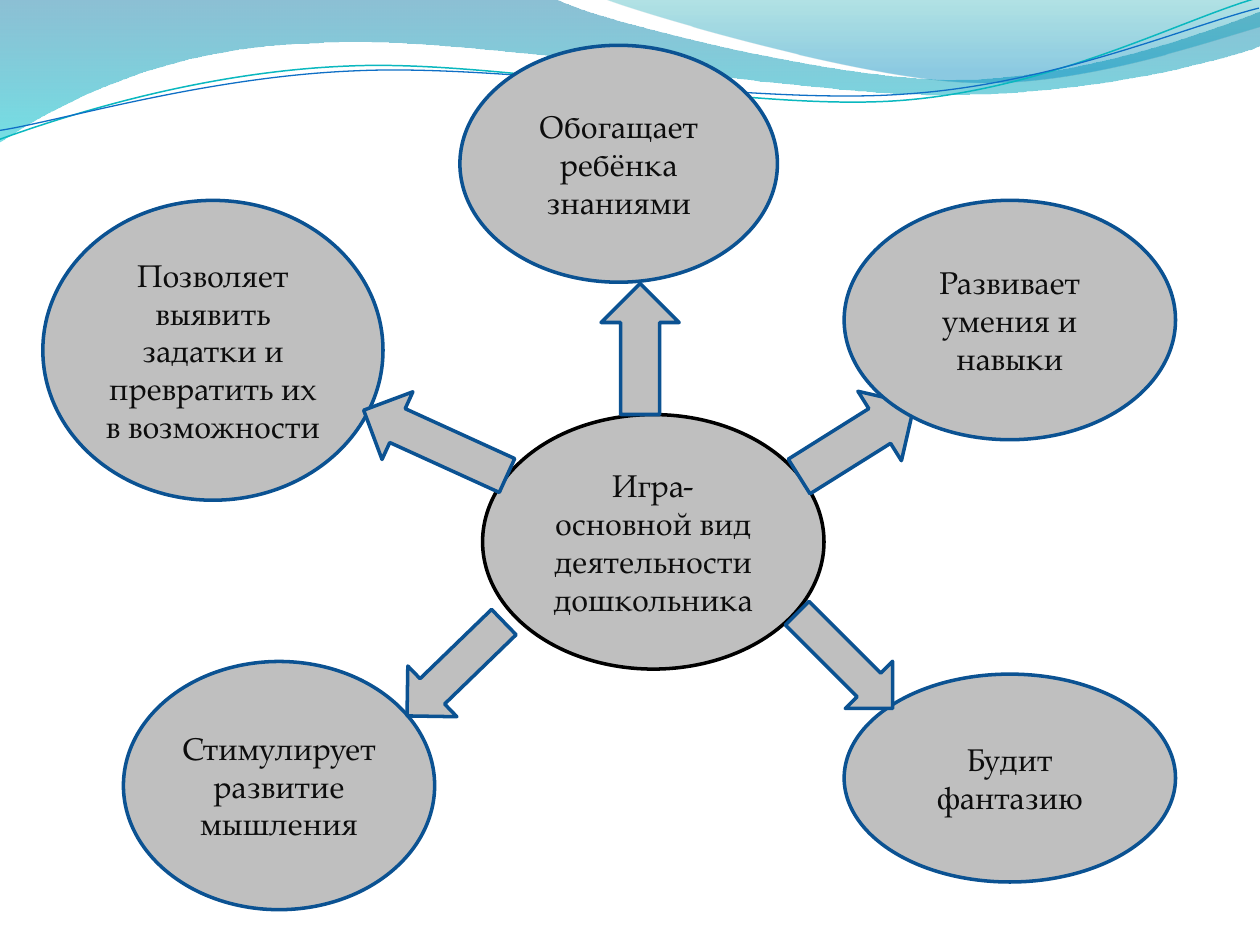
"""Build a slide showing what play gives a preschool child."""
from lxml import etree
from pptx import Presentation
from pptx.dml.color import RGBColor
from pptx.enum.shapes import MSO_SHAPE
from pptx.enum.text import MSO_ANCHOR, PP_ALIGN
from pptx.oxml.ns import qn
from pptx.util import Inches, Pt

OVAL = MSO_SHAPE.OVAL
RIGHT, LEFT, UP = MSO_SHAPE.RIGHT_ARROW, MSO_SHAPE.LEFT_ARROW, MSO_SHAPE.UP_ARROW
CENTER, MIDDLE = PP_ALIGN.CENTER, MSO_ANCHOR.MIDDLE
GRAY = RGBColor(0xBF, 0xBF, 0xBF)
NAVY = RGBColor(0x0B, 0x52, 0x92)
BLACK = RGBColor(0, 0, 0)
INK = RGBColor(0x0D, 0x0D, 0x0D)
DEEP = RGBColor(0x00, 0x74, 0xA1)
CYAN = RGBColor(0x00, 0xC6, 0xCF)
TEAL = RGBColor(0x00, 0xA1, 0xA9)
SKY = RGBColor(0x00, 0x8B, 0xBF)
AQUA = RGBColor(0x0A, 0xB8, 0xBF)
BLUE = RGBColor(0x0F, 0x6F, 0xC6)
FONT = "TeX Gyre Pagella"
COLS = 10
TILT = 357.3

WAVES = [
    ([(0, 0), (4.4, -0.01), (4.76, 0.17, 6.64, 0.63, 7.58, 0.63),
      (8.53, 0.63, 9.58, 0.26, 10, 0.09), (10.01, 0.36),
      (9.83, 0.44, 8.7, 0.76, 7.46, 0.75), (6.22, 0.75, 3.82, 0.28, 2.57, 0.34),
      (1.29, 0.36, 0.46, 0.83, -0.01, 1.13), (0, 0)],
     [(0, DEEP, 45), (1, CYAN, 55)]),
    ([(4.79, -0.01), (5.09, 0.11, 6.82, 0.62, 7.69, 0.65),
      (8.56, 0.69, 9.61, 0.32, 10, 0.21), (10, 0), (4.79, -0.01)],
     [(0, TEAL, 30), (0.8, SKY, 45)]),
]
STRANDS = [
    ([(-0.02, 0.87), (0.47, 0.72, 1.58, 0.41, 2.77, 0.42),
      (3.96, 0.42, 5.91, 0.93, 7.12, 0.9), (8.32, 0.87, 9.4, 0.36, 10, 0.22)], AQUA, 0.85),
    ([(-0.02, 0.8), (0.46, 0.75, 1.64, 0.45, 2.83, 0.46),
      (4.03, 0.46, 5.96, 0.88, 7.16, 0.85), (8.35, 0.83, 9.42, 0.42, 10.01, 0.3)], BLUE, 0.75),
]
BENEFITS = [
    ("Позволяет выявить задатки и превратить их в возможности", (0.34, 1.59, 2.7, 2.38)),
    ("Стимулирует развитие мышления", (0.98, 5.25, 2.47, 1.97)),
    ("Будит фантазию", (6.7, 5.35, 2.63, 1.65)),
    ("Обогащает ребёнка знаниями", (3.65, 0.36, 2.52, 1.88)),
]
ARROWS = [
    (RIGHT, (6.26, 3.17, 1.08, 0.65), 327.9),
    (UP, (4.77, 2.25, 0.62, 1.04), 0),
    (LEFT, (2.83, 3.22, 1.25, 0.59), 24.5),
    (RIGHT, (6.17, 4.98, 1.07, 0.53), 45),
    (LEFT, (3.08, 5.03, 1.07, 0.56), 315.9),
]


def write(tf, text, size=18, color=INK, font=FONT, align=CENTER):
    tf.word_wrap = True
    tf.vertical_anchor = MIDDLE
    p = tf.paragraphs[0]
    p.alignment = align
    r = p.add_run()
    r.text = text
    r.font.name, r.font.size = font, Pt(size)
    r.font.color.rgb = color


class Board:
    def __init__(self, prs):
        self.s = prs.slides.add_slide(prs.slide_layouts[6])
        self.cell = prs.slide_width / COLS

    def grid(self, values):
        return [round(v * self.cell) for v in values]

    def outline(self, path, close):
        steps = [self.grid(step) for step in path]
        points = [step[i:i + 2] for step in steps for i in range(0, len(step), 2)]
        builder = self.s.shapes.build_freeform(*points[0])
        builder.add_line_segments(points[1:], close=close)
        sp = builder.convert_to_shape()
        sp.shadow.inherit = False
        lines = iter(list(sp._element.spPr.iter(qn("a:lnTo"))))
        for step in steps[1:]:
            first = next(lines)
            if len(step) == 6:
                curve = etree.Element(qn("a:cubicBezTo"))
                first.addprevious(curve)
                for line in (first, next(lines), next(lines)):
                    curve.append(line[0])
                    line.getparent().remove(line)
        return sp

    def wave(self, path, stops):
        sp = self.outline(path, True)
        sp.line.fill.background()
        sp.fill.gradient()
        sp.fill.gradient_angle = 270
        for stop, (position, color, _) in zip(sp.fill.gradient_stops, stops):
            stop.position, stop.color.rgb = position, color
        colors = list(sp._element.spPr.iter(qn("a:srgbClr")))
        for node, (_, _, opacity) in zip(colors, stops):
            etree.SubElement(node, qn("a:alpha")).set("val", str(opacity * 1000))

    def strand(self, path, color, width):
        sp = self.outline(path, False)
        sp.rotation = TILT
        sp.fill.background()
        sp.line.color.rgb, sp.line.width = color, Pt(width)

    def shape(self, kind, box, line=NAVY):
        sp = self.s.shapes.add_shape(kind, *self.grid(box))
        sp.shadow.inherit = False
        sp.fill.solid()
        sp.fill.fore_color.rgb = GRAY
        sp.line.color.rgb, sp.line.width = line, Pt(2)
        return sp

    def bubble(self, text, box, line=NAVY):
        write(self.shape(OVAL, box, line).text_frame, text)

    def arrow(self, kind, box, angle):
        self.shape(kind, box).rotation = angle


def main():
    prs = Presentation()
    prs.slide_width, prs.slide_height = Inches(10), Inches(7.5)
    board = Board(prs)
    for wave in WAVES:
        board.wave(*wave)
    for strand in STRANDS:
        board.strand(*strand)
    for benefit in BENEFITS:
        board.bubble(*benefit)
    board.bubble("Игра-основной вид деятельности дошкольника", (3.83, 3.29, 2.71, 2.02), BLACK)
    for arrow in ARROWS:
        board.arrow(*arrow)
    board.bubble("Развивает умения и навыки", (6.7, 1.59, 2.63, 1.9))
    prs.save("out.pptx")


if __name__ == "__main__":
    main()
